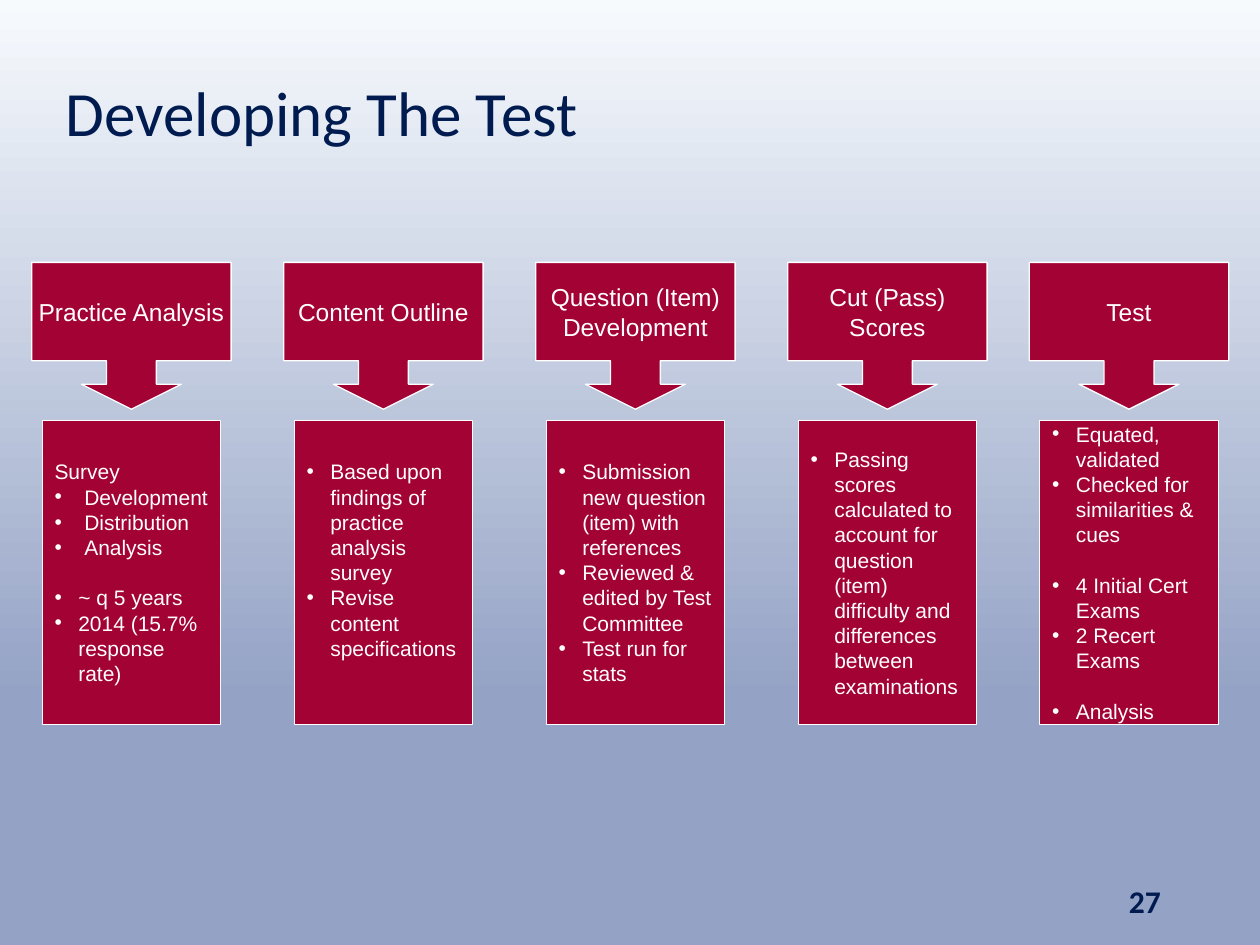
from dataclasses import dataclass

from lxml import etree
from pptx import Presentation
from pptx.dml.color import RGBColor
from pptx.enum.shapes import MSO_SHAPE
from pptx.enum.text import MSO_ANCHOR, PP_ALIGN
from pptx.oxml.ns import qn
from pptx.util import Cm, Pt

RECT, CALLOUT = MSO_SHAPE.RECTANGLE, MSO_SHAPE.DOWN_ARROW_CALLOUT
LEFT, CENTER, RIGHT = PP_ALIGN.LEFT, PP_ALIGN.CENTER, PP_ALIGN.RIGHT
MIDDLE = MSO_ANCHOR.MIDDLE

CRIMSON = RGBColor(0xA3, 0x02, 0x34)
NAVY = RGBColor(0x00, 0x1B, 0x50)
WHITE = RGBColor(0xFF, 0xFF, 0xFF)
SKY_TOP = RGBColor(0xF7, 0xFA, 0xFD)
SKY_BOTTOM = RGBColor(0x94, 0xA2, 0xC5)

HEAD_TOP, HEAD_W, HEAD_H = 5.29, 4.02, 2.96
BODY_TOP, BODY_W, BODY_H = 8.47, 3.6, 6.14
FIRST_LEFT, STEP, LAST_LEFT = 0.64, 5.08, 20.75
HANG = 0.48
GROUP_GAP = 14.4


@dataclass
class Item:
    text: str
    indent: float = HANG
    before: float = 0


@dataclass
class Stage:
    title: str
    items: list[Item]
    wrap: bool = True
    bottom: float = 0.13


STAGES = [
    Stage("Practice Analysis", [
        Item("Survey", indent=0),
        Item("Development", indent=0.6),
        Item("Distribution", indent=0.6),
        Item("Analysis", indent=0.6),
        Item("~ q 5 years", before=GROUP_GAP),
        Item("2014 (15.7% response rate)"),
    ], wrap=False),
    Stage("Content Outline", [
        Item("Based upon findings of practice analysis survey"),
        Item("Revise content specifications"),
    ], wrap=False, bottom=0.64),
    Stage("Question (Item) Development", [
        Item("Submission new question (item) with references"),
        Item("Reviewed & edited by Test Committee"),
        Item("Test run for stats"),
    ]),
    Stage("Cut (Pass) Scores", [
        Item("Passing scores calculated to account for question (item) "
             "difficulty and differences between examinations"),
    ]),
    Stage("Test", [
        Item("Equated, validated"),
        Item("Checked for similarities & cues"),
        Item("4 Initial Cert Exams", before=GROUP_GAP),
        Item("2 Recert Exams"),
        Item("Analysis", before=GROUP_GAP),
    ]),
]


def write(p, text: str, *, size: float, color=WHITE, font="Arial",
          bold=False, align=LEFT, before: float = 0, indent: float = 0) -> None:
    """Fill a paragraph; a positive indent (cm) makes it a bullet."""
    p.alignment = align
    if before:
        p.space_before = Pt(before)
    if indent:
        pPr = p._p.get_or_add_pPr()
        pPr.set("marL", str(Cm(indent)))
        pPr.set("indent", str(-Cm(indent)))
        etree.SubElement(pPr, qn("a:buFont")).set("typeface", "Arial")
        etree.SubElement(pPr, qn("a:buChar")).set("char", "•")
    r = p.add_run()
    r.text = text
    r.font.size = Pt(size)
    r.font.name = font
    r.font.bold = bold
    r.font.color.rgb = color


def add_box(s, kind, left: float, top: float, width: float, height: float,
            line: float):
    sp = s.shapes.add_shape(kind, Cm(left), Cm(top), Cm(width), Cm(height))
    sp.shadow.inherit = False
    sp.fill.solid()
    sp.fill.fore_color.rgb = CRIMSON
    sp.line.color.rgb = WHITE
    sp.line.width = Pt(line)
    sp.text_frame.vertical_anchor = MIDDLE
    return sp


def add_stage(s, stage: Stage, left: float) -> None:
    body = add_box(s, RECT, left + (HEAD_W - BODY_W) / 2, BODY_TOP,
                   BODY_W, BODY_H, 0.25)
    tf = body.text_frame
    tf.word_wrap = True
    tf.margin_bottom = Cm(stage.bottom)
    for i, item in enumerate(stage.items):
        p = tf.add_paragraph() if i else tf.paragraphs[0]
        write(p, item.text, size=12, before=item.before, indent=item.indent)

    head = add_box(s, CALLOUT, left, HEAD_TOP, HEAD_W, HEAD_H, 0.75)
    for i, value in enumerate((0.34, 0.34, 0.17, 0.67)):
        head.adjustments[i] = value
    head.text_frame.word_wrap = stage.wrap
    write(head.text_frame.paragraphs[0], stage.title, size=14, align=CENTER)


def set_background(s) -> None:
    fill = s.background.fill
    fill.gradient()
    fill.gradient_angle = 270
    for stop, position, color in zip(fill.gradient_stops, (0, 0.74),
                                     (SKY_TOP, SKY_BOTTOM)):
        stop.position = position
        stop.color.rgb = color


def main() -> None:
    prs = Presentation()
    prs.slide_width, prs.slide_height = Cm(25.4), Cm(19.05)
    s = prs.slides.add_slide(prs.slide_layouts[5])
    set_background(s)

    title = s.shapes.title
    title.left, title.top = Cm(1.07), Cm(0.76)
    title.width, title.height = Cm(23.29), Cm(3.18)
    title.text_frame.vertical_anchor = MIDDLE
    p = title.text_frame.paragraphs[0]
    p.line_spacing = 0.9
    write(p, "Developing The Test", size=36, color=NAVY, font="Calibri")

    for i, stage in enumerate(STAGES):
        is_last = i == len(STAGES) - 1
        add_stage(s, stage, LAST_LEFT if is_last else FIRST_LEFT + i * STEP)

    number = s.shapes.add_textbox(Cm(17.93), Cm(17.65), Cm(5.72), Cm(1.02))
    tf = number.text_frame
    tf.word_wrap = True
    tf.vertical_anchor = MIDDLE
    write(tf.paragraphs[0], "27", size=18, color=NAVY, font="Calibri",
          bold=True, align=RIGHT)

    prs.save("out.pptx")


if __name__ == "__main__":
    main()
